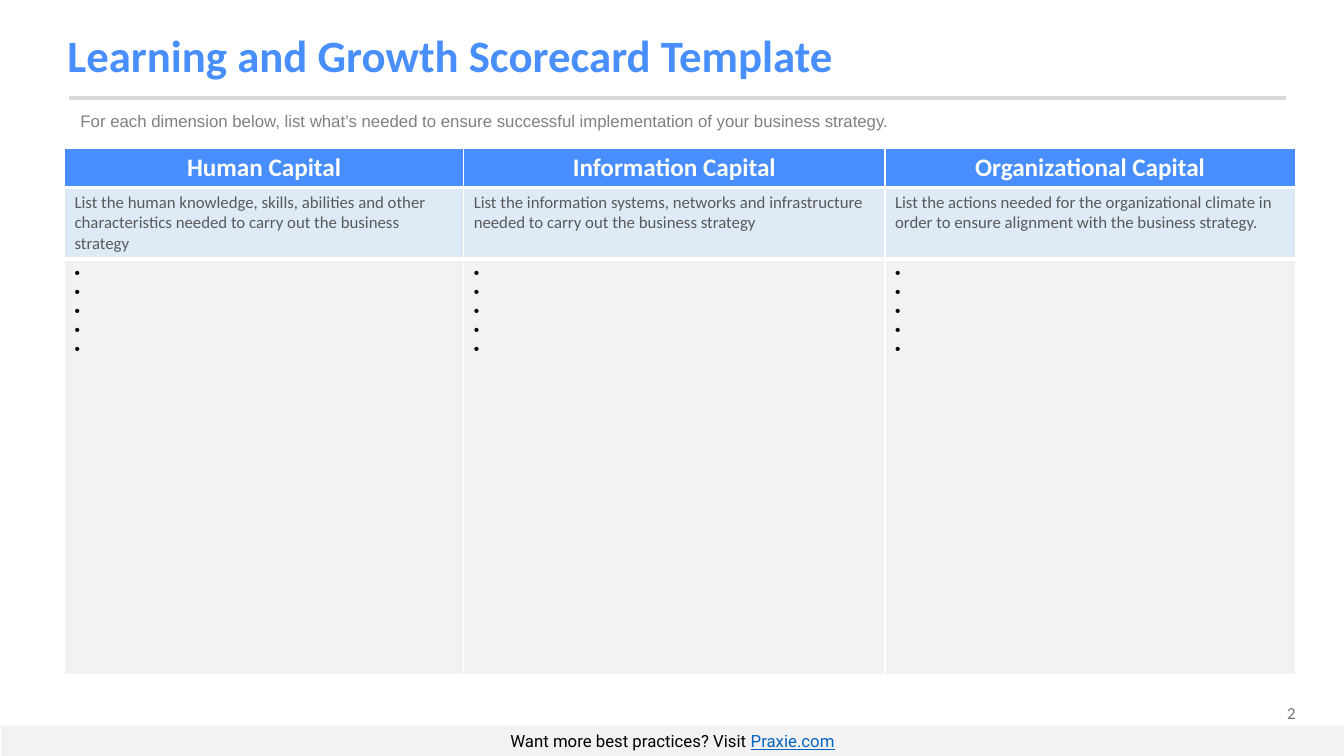
from dataclasses import dataclass

from lxml.etree import SubElement
from pptx import Presentation
from pptx.dml.color import RGBColor as Rgb
from pptx.enum.shapes import MSO_CONNECTOR as Link, MSO_SHAPE as Form
from pptx.enum.text import MSO_ANCHOR as Anchor, PP_ALIGN as Align
from pptx.oxml import parse_xml
from pptx.oxml.ns import nsdecls, qn
from pptx.util import Emu, Inches, Pt

HUES = {
    "title": "488EFD", "head": "488EFE", "brief": "DEEBF7", "pale": "F2F2F2",
    "rule": "D8D8D8", "white": "FFFFFF", "black": "000000", "text": "595959",
    "hint": "808080", "page": "757070", "link": "0563C1",
}
WIDE, HIGH = Inches(13.333), Inches(7.5)
BULLETS = 5


@dataclass
class Style:
    size: float
    hue: str
    font: str = "Calibri"
    bold: bool = False
    align: Align = Align.LEFT


@dataclass
class Label:
    text: str
    box: tuple[float, float, float, float]
    style: Style
    anchor: Anchor = Anchor.TOP
    lead: float = 1.0


@dataclass
class Topic:
    name: str
    brief: str
    width: float


@dataclass
class Band:
    height: float
    fill: str
    style: Style
    top: float
    base: float
    pad: float = 0.05
    anchor: Anchor = Anchor.TOP


LABELS = [
    Label("2", (89.48, 92.27, 7.65, 4), Style(12, "page", align=Align.RIGHT)),
    Label("Learning and Growth Scorecard Template", (4.28, 2.53, 82.05, 10.27),
          Style(32, "title", bold=True), Anchor.MIDDLE, 0.9),
    Label("For each dimension below, list what’s needed to ensure successful "
          "implementation of your business strategy.",
          (5.25, 14, 89.48, 4), Style(12, "hint", "Arial")),
]
TOPICS = [
    Topic("Human Capital", "List the human knowledge, skills, abilities and other "
          "characteristics needed to carry out the business strategy", 29.7),
    Topic("Information Capital", "List the information systems, networks and "
          "infrastructure needed to carry out the business strategy", 31.35),
    Topic("Organizational Capital", "List the actions needed for the organizational "
          "climate in order to ensure alignment with the business strategy.", 30.53),
]
BANDS = [
    Band(5.2, "head", Style(18, "white", bold=True, align=Align.CENTER),
         1, 3, 0.04, Anchor.MIDDLE),
    Band(9.47, "brief", Style(12, "text"), 3, 3),
    Band(54.93, "pale", Style(11, "black"), 3, 1),
]


def across(share: float) -> Emu:
    return Emu(round(WIDE * share / 100))


def down(share: float) -> Emu:
    return Emu(round(HIGH * share / 100))


def place(box: tuple[float, float, float, float]) -> tuple[Emu, Emu, Emu, Emu]:
    left, top, width, height = box
    return across(left), down(top), across(width), down(height)


def color(name: str) -> Rgb:
    return Rgb.from_string(HUES[name])


def dress(para, style: Style) -> None:
    para.alignment = style.align
    for run in para.runs:
        run.font.size = Pt(style.size)
        run.font.name = style.font
        run.font.bold = style.bold
        run.font.color.rgb = color(style.hue)


def write(slide, label: Label) -> None:
    frame = slide.shapes.add_textbox(*place(label.box)).text_frame
    frame.word_wrap = True
    frame.vertical_anchor = label.anchor
    frame.text = label.text
    para = frame.paragraphs[0]
    para.line_spacing = label.lead
    dress(para, label.style)


def draw_rule(slide) -> None:
    level = down(12.93)
    rule = slide.shapes.add_connector(
        Link.STRAIGHT, across(5.1), level, across(95.7), level)
    rule.line.color.rgb = color("rule")
    rule.line.width = Pt(3)
    SubElement(rule._element.spPr, qn("a:effectLst"))


def draw_foot(slide) -> None:
    foot = slide.shapes.add_shape(Form.RECTANGLE, *place((0.08, 96, 99.92, 4)))
    foot.shadow.inherit = False
    foot.fill.solid()
    foot.fill.fore_color.rgb = color("pale")
    foot.line.fill.background()
    frame = foot.text_frame
    frame.vertical_anchor = Anchor.TOP
    para = frame.paragraphs[0]
    para.text = "Want more best practices? Visit "
    link = para.add_run()
    link.text = "Praxie.com"
    dress(para, Style(12, "black", "Roboto", align=Align.CENTER))
    link.font.color.rgb = color("link")
    link.font.underline = True


def edge(cell, band: Band) -> None:
    sides = {"lnL": 1, "lnR": 1, "lnT": band.top, "lnB": band.base}
    props = cell._tc.get_or_add_tcPr()
    for spot, (side, width) in enumerate(sides.items()):
        props.insert(spot, parse_xml(
            f'<a:{side} {nsdecls("a")} w="{Pt(width)}"><a:solidFill>'
            f'<a:srgbClr val="{HUES["white"]}"/></a:solidFill></a:{side}>'))


def bullet(para) -> None:
    props = para._p.get_or_add_pPr()
    props.set("marL", str(Inches(0.17)))
    props.set("indent", str(Inches(-0.17)))
    SubElement(props, qn("a:buFont")).set("typeface", "Arial")
    SubElement(props, qn("a:buChar")).set("char", "•")


def fill_cell(cell, text: str, band: Band) -> None:
    cell.fill.solid()
    cell.fill.fore_color.rgb = color(band.fill)
    cell.margin_top = cell.margin_bottom = Inches(band.pad)
    cell.vertical_anchor = band.anchor
    edge(cell, band)
    cell.text_frame.text = text
    for para in cell.text_frame.paragraphs:
        if not text.strip():
            bullet(para)
        dress(para, band.style)


def draw_table(slide) -> None:
    box = (4.8, 19.6, sum(t.width for t in TOPICS), sum(b.height for b in BANDS))
    table = slide.shapes.add_table(len(BANDS), len(TOPICS), *place(box)).table
    table.horz_banding = False
    for row, band in zip(table.rows, BANDS):
        row.height = down(band.height)
    for col, topic in enumerate(TOPICS):
        table.columns[col].width = across(topic.width)
        texts = topic.name, topic.brief, "\n".join([" "] * BULLETS)
        for row, (text, band) in enumerate(zip(texts, BANDS)):
            fill_cell(table.cell(row, col), text, band)


def main() -> None:
    deck = Presentation()
    deck.slide_width, deck.slide_height = WIDE, HIGH
    slide = deck.slides.add_slide(deck.slide_layouts[6])
    draw_rule(slide)
    draw_foot(slide)
    draw_table(slide)
    for label in LABELS:
        write(slide, label)
    deck.save("out.pptx")


if __name__ == "__main__":
    main()
